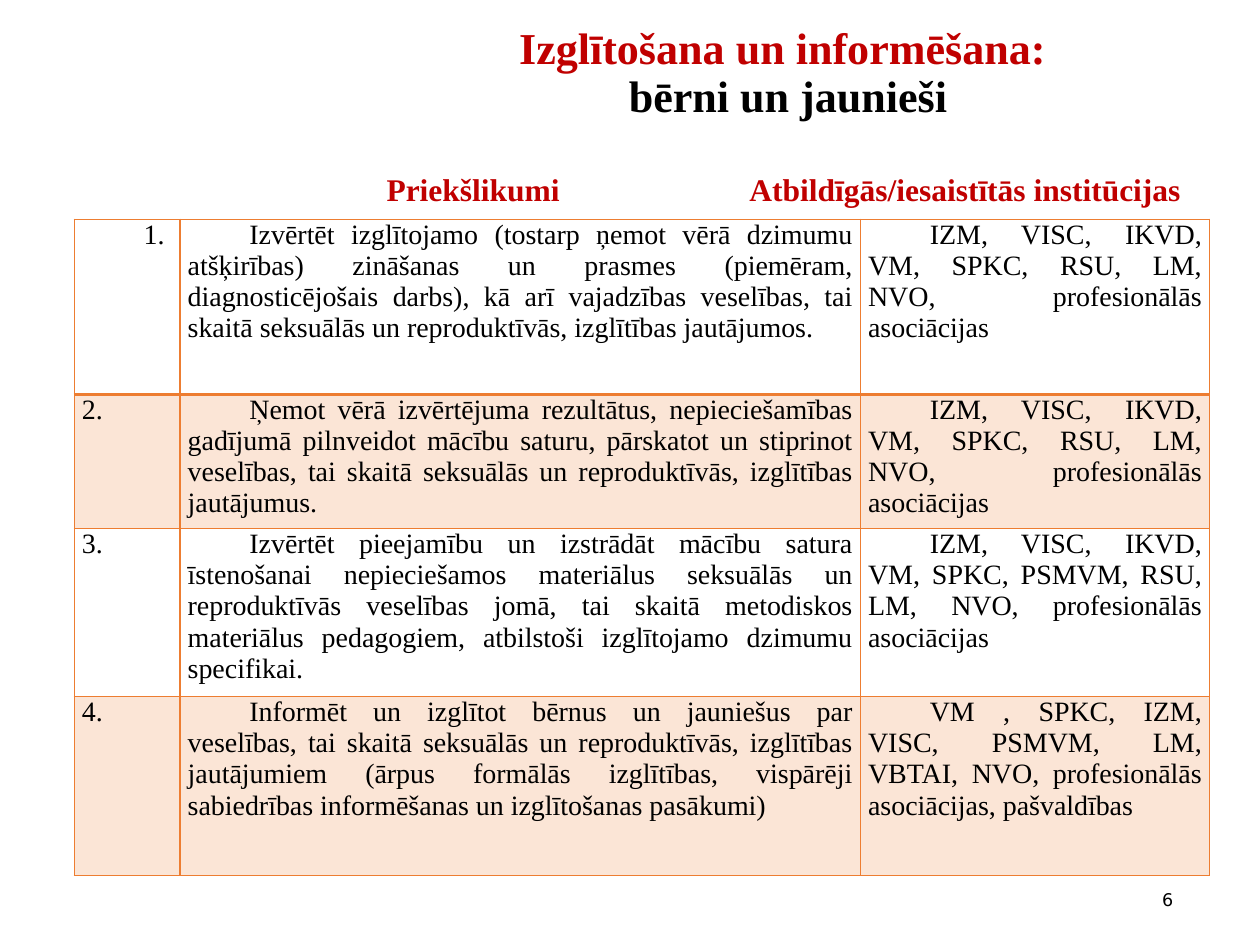
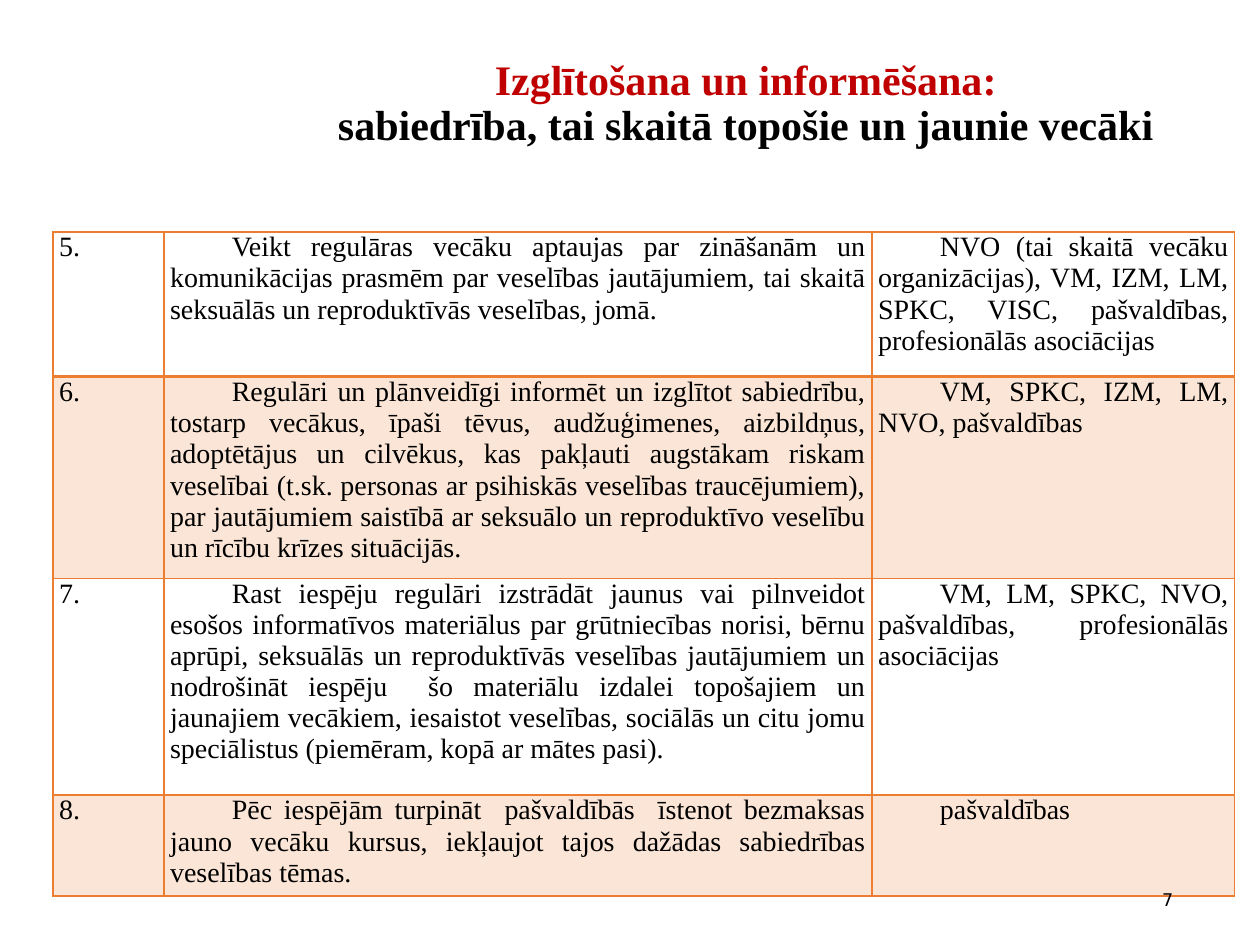
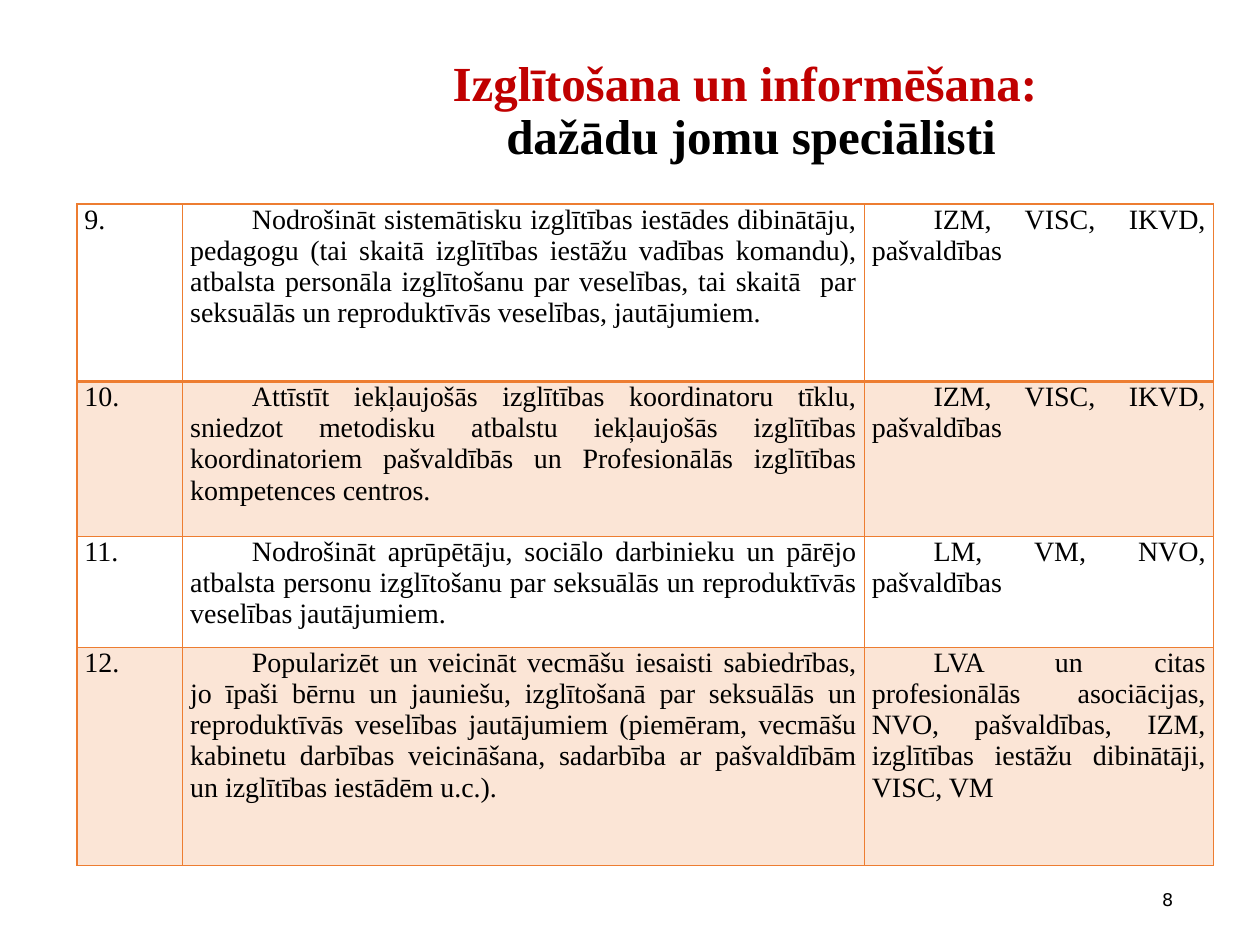
from lxml.etree import SubElement
from pptx import Presentation
from pptx.dml.color import RGBColor
from pptx.enum.text import MSO_ANCHOR, PP_ALIGN
from pptx.oxml.ns import qn
from pptx.util import Inches, Pt

# Shared style
RED, BLACK, WHITE = "C00000", "000000", "FFFFFF"
ORANGE, PALE_ORANGE = "ED7D31", "FBE5D6"
SERIF, SANS = "Times New Roman", "DejaVu Sans"
THEME_LINE = "Izglītošana un informēšana: "
FIRST_LINE_INDENT = 0.49

# Proposals: number, proposal, responsible institutions
CHILDREN_PROPOSALS = [
    ("1.", "Izvērtēt izglītojamo (tostarp ņemot vērā dzimumu atšķirības) zināšanas un prasmes "
     "(piemēram, diagnosticējošais darbs), kā arī vajadzības veselības, tai skaitā seksuālās un "
     "reproduktīvās, izglītības jautājumos.",
     "IZM, VISC, IKVD, VM, SPKC, RSU, LM, NVO, profesionālās asociācijas"),
    ("2.", "Ņemot vērā izvērtējuma rezultātus, nepieciešamības gadījumā pilnveidot mācību saturu, "
     "pārskatot un stiprinot veselības, tai skaitā seksuālās un reproduktīvās, izglītības "
     "jautājumus.",
     "IZM, VISC, IKVD, VM, SPKC, RSU, LM, NVO, profesionālās asociācijas"),
    ("3.", "Izvērtēt pieejamību un izstrādāt mācību satura īstenošanai nepieciešamos materiālus "
     "seksuālās un reproduktīvās veselības jomā, tai skaitā metodiskos materiālus pedagogiem, "
     "atbilstoši izglītojamo dzimumu specifikai.",
     "IZM, VISC, IKVD, VM, SPKC, PSMVM, RSU, LM, NVO, profesionālās asociācijas"),
    ("4.", "Informēt un izglītot bērnus un jauniešus par veselības, tai skaitā seksuālās un "
     "reproduktīvās, izglītības jautājumiem (ārpus formālās izglītības, vispārēji sabiedrības "
     "informēšanas un izglītošanas pasākumi)",
     "VM , SPKC, IZM, VISC, PSMVM, LM, VBTAI, NVO, profesionālās asociācijas, pašvaldības"),
]
SOCIETY_PROPOSALS = [
    ("5.", "Veikt regulāras vecāku aptaujas par zināšanām un komunikācijas prasmēm par veselības "
     "jautājumiem, tai skaitā seksuālās un reproduktīvās veselības, jomā.",
     "NVO (tai skaitā vecāku organizācijas), VM, IZM, LM, SPKC, VISC, pašvaldības, "
     "profesionālās asociācijas"),
    ("6.", "Regulāri un plānveidīgi informēt un izglītot sabiedrību, tostarp vecākus, īpaši tēvus, "
     "audžuģimenes, aizbildņus, adoptētājus un cilvēkus, kas pakļauti augstākam riskam veselībai "
     "(t.sk. personas ar psihiskās veselības traucējumiem), par jautājumiem saistībā ar seksuālo "
     "un reproduktīvo veselību un rīcību krīzes situācijās.",
     "VM, SPKC, IZM, LM, NVO, pašvaldības"),
    ("7.", "Rast iespēju regulāri izstrādāt jaunus vai pilnveidot esošos informatīvos materiālus "
     "par grūtniecības norisi, bērnu aprūpi, seksuālās un reproduktīvās veselības jautājumiem un "
     "nodrošināt iespēju  šo materiālu izdalei topošajiem un jaunajiem vecākiem, iesaistot "
     "veselības, sociālās un citu jomu speciālistus (piemēram, kopā ar mātes pasi).",
     "VM, LM, SPKC, NVO, pašvaldības, profesionālās asociācijas"),
    ("8.", "Pēc iespējām turpināt  pašvaldībās  īstenot bezmaksas jauno vecāku kursus, iekļaujot "
     "tajos dažādas sabiedrības veselības tēmas.",
     "pašvaldības"),
]
SPECIALIST_PROPOSALS = [
    ("9.", "Nodrošināt sistemātisku izglītības iestādes dibinātāju, pedagogu (tai skaitā izglītības "
     "iestāžu vadības komandu), atbalsta personāla izglītošanu par veselības, tai skaitā  par "
     "seksuālās un reproduktīvās veselības, jautājumiem.",
     "IZM, VISC, IKVD, pašvaldības"),
    ("10.", "Attīstīt iekļaujošās izglītības koordinatoru tīklu, sniedzot metodisku atbalstu "
     "iekļaujošās izglītības koordinatoriem pašvaldībās un Profesionālās izglītības kompetences "
     "centros.",
     "IZM, VISC, IKVD, pašvaldības"),
    ("11.", "Nodrošināt aprūpētāju, sociālo darbinieku un pārējo atbalsta personu izglītošanu par "
     "seksuālās un reproduktīvās veselības jautājumiem.",
     "LM, VM, NVO, pašvaldības"),
    ("12.", "Popularizēt un veicināt vecmāšu iesaisti sabiedrības, jo īpaši bērnu un jauniešu, "
     "izglītošanā par seksuālās un reproduktīvās veselības jautājumiem (piemēram, vecmāšu kabinetu "
     "darbības veicināšana, sadarbība ar pašvaldībām un izglītības iestādēm u.c.).",
     "LVA un citas profesionālās asociācijas, NVO, pašvaldības, IZM, izglītības iestāžu "
     "dibinātāji, VISC, VM"),
]


def color(hex_code):
    return RGBColor.from_string(hex_code)


def format_runs(paragraph, size, hex_codes, font=SERIF, bold=False):
    """Style the runs of a paragraph, one colour for each run."""
    for run, hex_code in zip(paragraph.runs, hex_codes):
        run.font.name = font
        run.font.size = Pt(size)
        run.font.bold = bold
        run.font.color.rgb = color(hex_code)


def add_text_frame(slide, box):
    frame = slide.shapes.add_textbox(*map(Inches, box)).text_frame
    frame.word_wrap = True
    return frame


def add_title(slide, box, audience, size):
    frame = add_text_frame(slide, box)
    heading = frame.paragraphs[0]
    heading.text = f"{THEME_LINE}\v{audience}"
    heading.alignment = PP_ALIGN.CENTER
    heading.line_spacing = 0.9
    format_runs(heading, size, (RED, BLACK), bold=True)
    return frame


def add_column_headings(title_frame, headings, tab_stops):
    """Put the table's column headings under the title, each at its tab stop."""
    line = title_frame.add_paragraph()
    tabs = SubElement(line._p.get_or_add_pPr(), qn("a:tabLst"))
    for stop in tab_stops:
        SubElement(tabs, qn("a:tab"), pos=str(Inches(stop)), algn="l")
    line.text = "".join(f"\t{heading}" for heading in headings)
    line.alignment = PP_ALIGN.LEFT
    line.line_spacing = 0.9
    line.space_before = Pt(30)
    format_runs(line, 18, (RED,), bold=True)


def add_page_number(slide, number):
    frame = add_text_frame(slide, (8.56, 6.94, 0.85, 0.4))
    frame.vertical_anchor = MSO_ANCHOR.MIDDLE
    page = frame.paragraphs[0]
    page.text = str(number)
    page.alignment = PP_ALIGN.RIGHT
    format_runs(page, 10, (BLACK,), font=SANS)


def set_borders(cell, widths):
    """Draw the left, right, top and bottom borders, widths in points."""
    properties = cell._tc.get_or_add_tcPr()
    for position, (side, width) in enumerate(zip("LRTB", widths)):
        border = SubElement(properties, qn(f"a:ln{side}"), w=str(Pt(width)))
        solid = SubElement(border, qn("a:solidFill"))
        SubElement(solid, qn("a:srgbClr"), val=ORANGE)
        properties.insert(position, border)


def fill_cell(cell, text, side_margin, indent, fill, border_widths):
    cell.margin_left = cell.margin_right = Inches(side_margin)
    cell.margin_top = cell.margin_bottom = 0
    cell.fill.solid()
    cell.fill.fore_color.rgb = color(fill)
    set_borders(cell, border_widths)
    entry = cell.text_frame.paragraphs[0]
    entry.text = text
    entry.alignment = PP_ALIGN.JUSTIFY
    indents = entry._p.get_or_add_pPr()
    indents.set("marL", "0")
    indents.set("indent", str(Inches(indent)))
    format_runs(entry, 16, (BLACK,))


def add_proposals(slide, corner, widths, heights, proposals, side_margin=0.06):
    size = (sum(widths), sum(heights))
    table = slide.shapes.add_table(len(heights), len(widths),
                                   *map(Inches, corner + size)).table
    table.first_row = table.horz_banding = False
    for column, width in zip(table.columns, widths):
        column.width = Inches(width)
    for index, (height, proposal) in enumerate(zip(heights, proposals)):
        table.rows[index].height = Inches(height)
        fill = PALE_ORANGE if index % 2 else WHITE
        # The first row is closed by a heavier line
        border_widths = (1, 1, 2 if index == 1 else 1, 2 if index == 0 else 1)
        for place, text in enumerate(proposal):
            indented = place > 0 or text == "1."
            fill_cell(table.cell(index, place), text, side_margin,
                      FIRST_LINE_INDENT if indented else 0, fill, border_widths)


def main():
    deck = Presentation()
    deck.slide_width, deck.slide_height = Inches(10), Inches(7.5)
    blank = deck.slide_layouts[6]
    children, society, specialists = (deck.slides.add_slide(blank) for _ in range(3))

    # Children and young people
    title = add_title(children, (2.27, 0.16, 7.97, 1.58), "bērni un jaunieši", 25.2)
    add_column_headings(title, ("Priekšlikumi", "Atbildīgās/iesaistītās institūcijas"),
                        (0.7, 3.58))
    add_proposals(children, (0.59, 1.74), (0.84, 5.4, 2.77), (1.39, 1.06, 1.33, 1.42),
                  CHILDREN_PROPOSALS)

    # Society and parents
    add_title(society, (2.5, 0.42, 6.92, 1.24),
              "sabiedrība, tai skaitā topošie un jaunie vecāki ", 24)
    add_proposals(society, (0.42, 1.84), (0.88, 5.62, 2.88), (1.15, 1.59, 1.72, 0.74),
                  SOCIETY_PROPOSALS, side_margin=0.05)

    # Specialists
    add_title(specialists, (2.5, 0.42, 6.92, 1.04), "dažādu jomu speciālisti", 28)
    add_proposals(specialists, (0.61, 1.62), (0.84, 5.41, 2.77), (1.41, 1.23, 0.88, 1.73),
                  SPECIALIST_PROPOSALS)

    for number, slide in enumerate(deck.slides, start=6):
        add_page_number(slide, number)
    deck.save("out.pptx")


if __name__ == "__main__":
    main()
